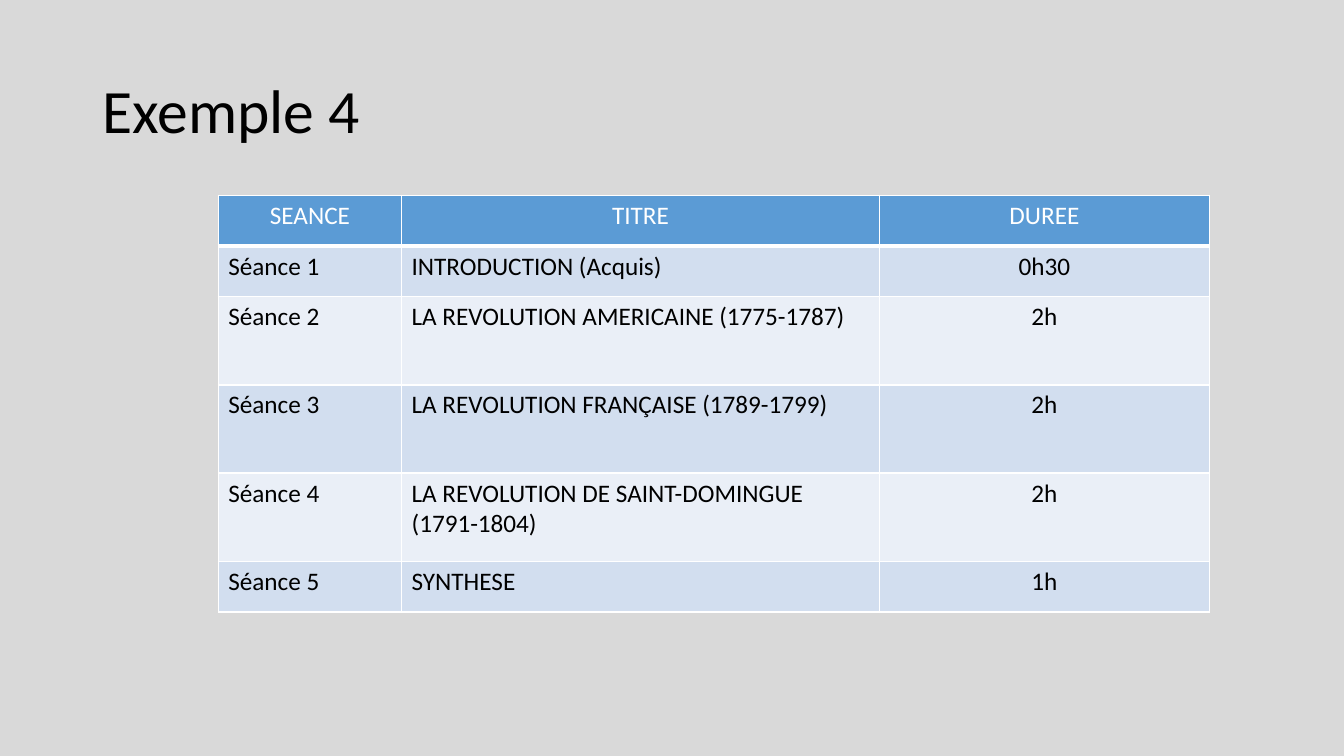
from lxml.etree import SubElement
from pptx import Presentation
from pptx.dml.color import RGBColor
from pptx.enum.text import MSO_ANCHOR, PP_ALIGN
from pptx.oxml.ns import qn
from pptx.util import Cm, Pt

TITLE = "Exemple 4"
ROWS = [
    ("SEANCE", "TITRE", "DUREE"),
    ("Séance 1", "INTRODUCTION (Acquis)", "0h30"),
    ("Séance 2", "LA REVOLUTION AMERICAINE (1775-1787)", "2h"),
    ("Séance 3", "LA REVOLUTION FRANÇAISE (1789-1799)", "2h"),
    ("Séance 4", "LA REVOLUTION DE SAINT-DOMINGUE (1791-1804)", "2h"),
    ("Séance 5", "SYNTHESE", "1h"),
]
WIDTHS = [4.62, 12.04, 8.32]
LOW, HIGH = 1.28, 2.22
HEIGHTS = [LOW, LOW, HIGH, HIGH, HIGH, LOW]
COLORS = {
    "back": "D9D9D9", "head": "5B9BD5", "odd": "D2DEEF",
    "even": "EAEFF7", "light": "FFFFFF", "dark": "000000",
}
FONT = "Calibri"


def color(name):
    return RGBColor.from_string(COLORS[name])


def style(para, size, tone, align):
    para.alignment = align
    for run in para.runs:
        font = run.font
        font.name, font.size, font.bold = FONT, Pt(size), False
        font.color.rgb = color(tone)


def border(cell, bottom):
    """Draw white lines around a cell; the bottom width is in points."""
    props = cell._tc.get_or_add_tcPr()
    sides = {"L": 1, "R": 1, "T": 1, "B": bottom}
    for side, width in sides.items():
        line = SubElement(props, qn(f"a:ln{side}"), w=str(Pt(width)))
        fill = SubElement(line, qn("a:solidFill"))
        SubElement(fill, qn("a:srgbClr"), val=COLORS["light"])


def add_title(slide):
    title = slide.shapes.title
    title.left, title.top = Cm(2.33), Cm(1.01)
    title.width, title.height = Cm(29.21), Cm(3.68)
    frame = title.text_frame
    frame.text = TITLE
    frame.vertical_anchor = MSO_ANCHOR.MIDDLE
    para = frame.paragraphs[0]
    para.line_spacing = 0.9
    style(para, 44, "dark", PP_ALIGN.LEFT)


def add_plan(slide):
    table = slide.shapes.add_table(
        len(ROWS), len(WIDTHS), Cm(5.5), Cm(4.92),
        Cm(sum(WIDTHS)), Cm(sum(HEIGHTS))).table
    for col, width in zip(table.columns, WIDTHS):
        col.width = Cm(width)
    for row, height in zip(table.rows, HEIGHTS):
        row.height = Cm(height)
    for r, texts in enumerate(ROWS):
        head = r == 0
        shade = "head" if head else "odd" if r % 2 else "even"
        for c, text in enumerate(texts):
            cell = table.cell(r, c)
            cell.text = text
            border(cell, 3 if head else 1)
            cell.fill.solid()
            cell.fill.fore_color.rgb = color(shade)
            mid = head or c == len(texts) - 1
            style(cell.text_frame.paragraphs[0], 18,
                  "light" if head else "dark",
                  PP_ALIGN.CENTER if mid else PP_ALIGN.LEFT)


def main():
    deck = Presentation()
    deck.slide_width, deck.slide_height = Cm(33.87), Cm(19.05)
    slide = deck.slides.add_slide(deck.slide_layouts[5])
    back = slide.background.fill
    back.solid()
    back.fore_color.rgb = color("back")
    add_title(slide)
    add_plan(slide)
    deck.save("out.pptx")


if __name__ == "__main__":
    main()
